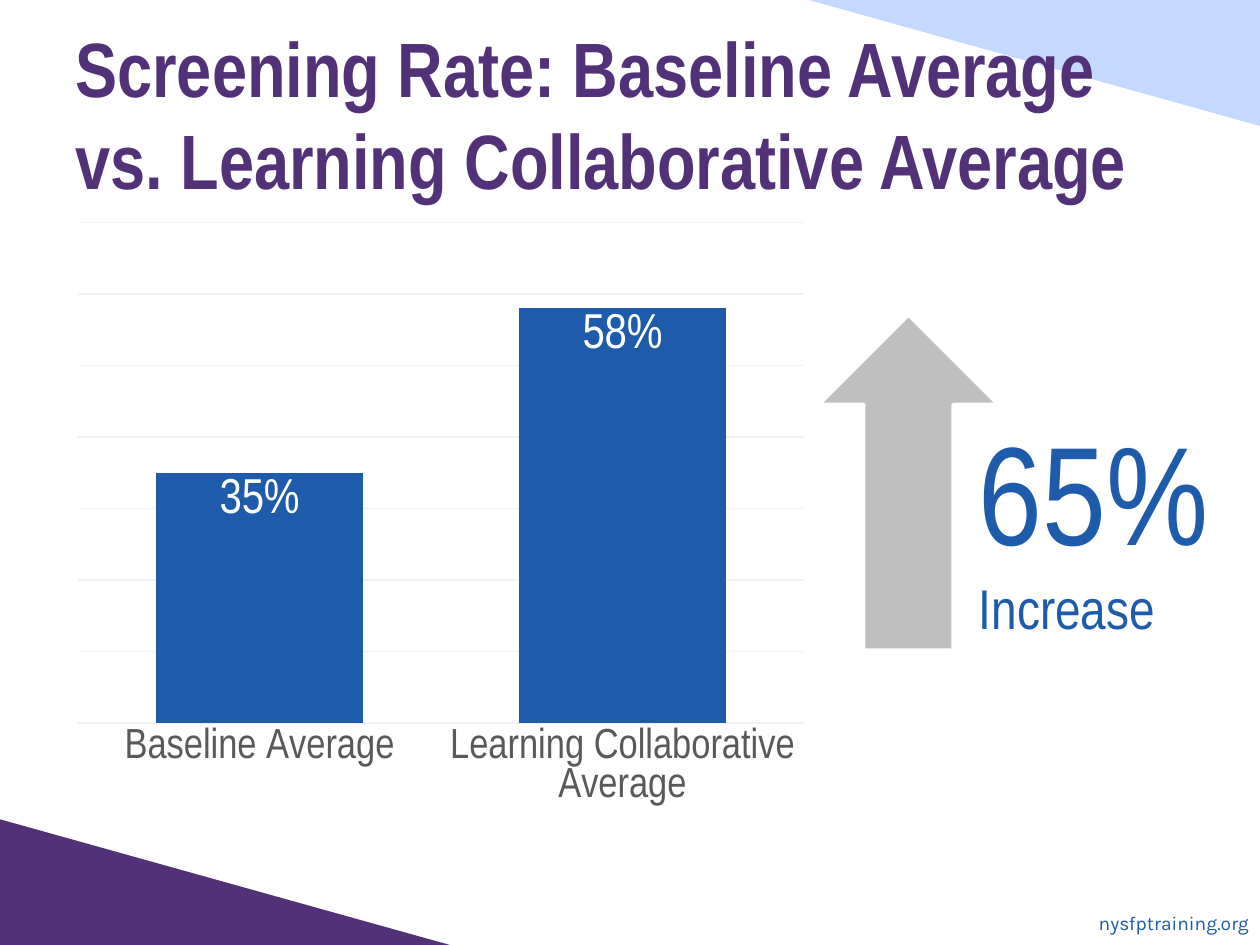
from pptx import Presentation
from pptx.chart.data import CategoryChartData as Data
from pptx.dml.color import RGBColor as Rgb
from pptx.enum.chart import XL_CHART_TYPE as Kind, XL_LABEL_POSITION as Pos, XL_TICK_MARK as Tick
from pptx.enum.shapes import MSO_SHAPE as Form
from pptx.enum.text import MSO_ANCHOR as Anchor
from pptx.util import Inches, Pt

HUES = {"plum": "523178", "sky": "C3D9FF", "link": "1D5CA9", "blue": "1E5BAA",
        "gray": "BFBFBF", "grid": "F2F2F2", "ink": "595959", "white": "FFFFFF"}


class Deck:
    """Hold the style and the current slide, and draw each kind of element."""

    def __init__(self, face):
        self.face = face
        self.prs = Presentation()
        self.prs.slide_width, self.prs.slide_height = Inches(10), Inches(7.5)
        self.slide = self.prs.slides.add_slide(self.prs.slide_layouts[6])

    def hue(self, name):
        return Rgb.from_string(HUES[name])

    def style(self, font, size, hue, bold=False, face=None):
        form = {"size": Pt(size), "bold": bold, "name": face or self.face}
        for key, val in form.items():
            setattr(font, key, val)
        font.color.rgb = self.hue(hue)

    def shape(self, form, box, hue, turn=0, edge=None):
        item = self.slide.shapes.add_shape(form, *map(Inches, box))
        item.shadow.inherit = False
        item.rotation = turn
        item.fill.solid()
        item.fill.fore_color.rgb = self.hue(hue)
        if edge:
            item.line.color.rgb = self.hue(edge)
            item.line.width = Pt(2)
        else:
            item.line.fill.background()

    def text(self, box, lines, anchor=Anchor.TOP, inset=None):
        frame = self.slide.shapes.add_textbox(*map(Inches, box)).text_frame
        form = {"word_wrap": True, "vertical_anchor": anchor}
        if inset is not None:
            for side in ("left", "top", "right", "bottom"):
                form[f"margin_{side}"] = Inches(inset)
        for key, val in form.items():
            setattr(frame, key, val)
        for num, (words, *look) in enumerate(lines):
            para = frame.add_paragraph() if num else frame.paragraphs[0]
            run = para.add_run()
            run.text = words
            self.style(run.font, *look)

    def chart(self, box, cats, vals):
        data = Data(number_format="0%")
        data.categories = cats
        data.add_series("Series 1", vals)
        frame = self.slide.shapes.add_chart(Kind.COLUMN_CLUSTERED, *map(Inches, box), data)
        chart = frame.chart
        chart.has_legend = chart.has_title = False
        self.style(chart.font, 24, "ink")

        base = chart.category_axis
        base.major_tick_mark = base.minor_tick_mark = Tick.NONE
        base.format.line.fill.background()
        self.style(base.tick_labels.font, 24, "ink")

        axis = chart.value_axis
        form = {"visible": False, "minimum_scale": 0, "maximum_scale": 0.7,
                "major_unit": 0.1, "has_major_gridlines": True}
        for key, val in form.items():
            setattr(axis, key, val)
        line = axis.major_gridlines.format.line
        line.color.rgb = self.hue("grid")
        line.width = Pt(0.75)

        plot = chart.plots[0]
        form = {"gap_width": 75, "overlap": -27, "vary_by_categories": False}
        for key, val in form.items():
            setattr(plot, key, val)
        fill = plot.series[0].format.fill
        fill.solid()
        fill.fore_color.rgb = self.hue("blue")

        tags = plot.series[0].data_labels
        form = {"show_value": True, "position": Pos.INSIDE_END,
                "number_format": "0%", "number_format_is_linked": False}
        for key, val in form.items():
            setattr(tags, key, val)
        self.style(tags.font, 28, "white")


def main():
    deck = Deck("Arial Narrow")
    deck.shape(Form.RIGHT_TRIANGLE, (-0.01, 6.5, 3.58, 1), "plum")
    deck.text((8.72, 7.23, 1.28, 0.2),
              [("nysfptraining.org", 11, "link", False, "Karla")], inset=0)
    deck.shape(Form.RIGHT_TRIANGLE, (6.42, 0, 3.58, 1), "sky", turn=180)
    title = "Screening Rate: Baseline Average vs. Learning Collaborative Average"
    deck.text((0.5, 0.3, 9, 1.19), [(title, 44, "plum", True)], anchor=Anchor.MIDDLE)
    deck.chart((0.5, 1.67, 6, 4.83),
               ("Baseline Average", "Learning Collaborative Average"), (0.35, 0.58))
    deck.shape(Form.UP_ARROW, (6.5, 2.5, 1.42, 2.66), "gray", edge="white")
    deck.text((7.67, 3.17, 2.33, 1.99),
              [("65%", 80, "blue"), ("Increase", 32, "blue")])
    deck.prs.save("out.pptx")


if __name__ == "__main__":
    main()
